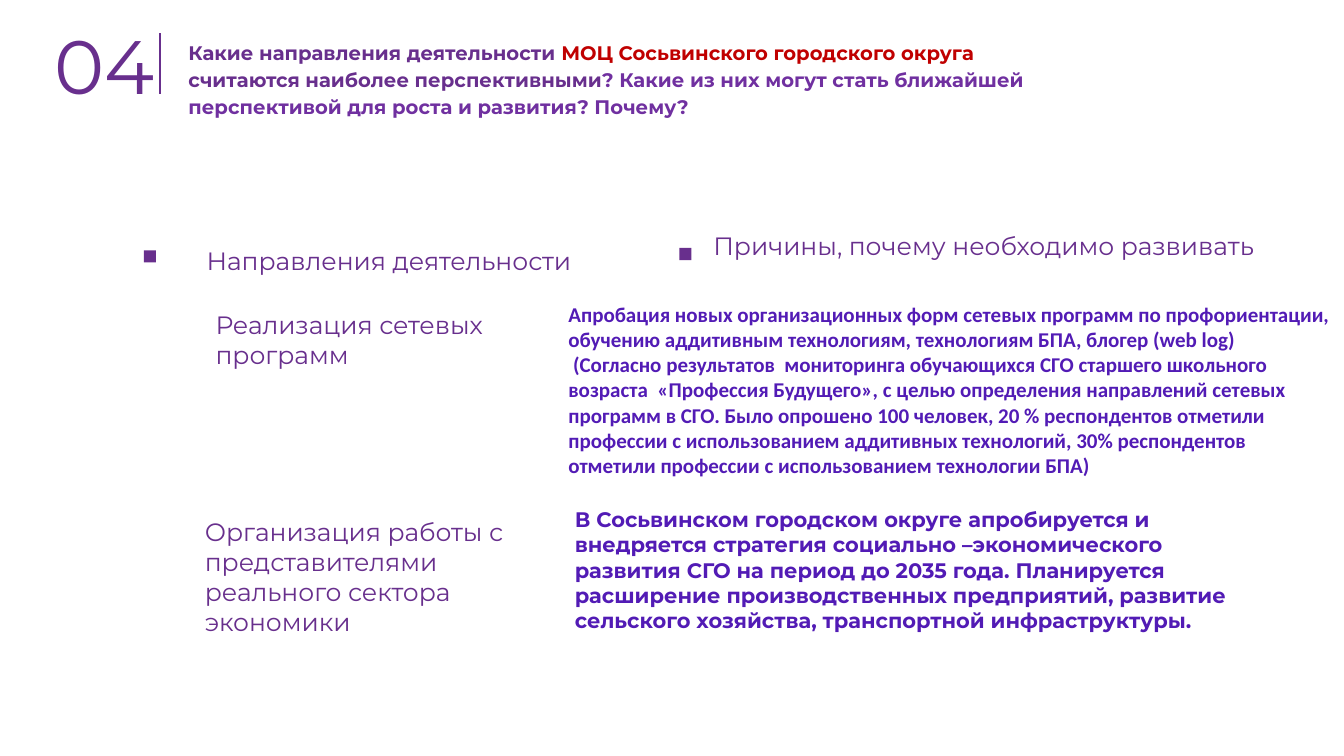
from dataclasses import dataclass

from pptx import Presentation
from pptx.dml.color import RGBColor
from pptx.enum.shapes import MSO_CONNECTOR, MSO_SHAPE
from pptx.enum.text import MSO_AUTO_SIZE
from pptx.oxml.ns import qn
from pptx.util import Inches, Pt

RECT = MSO_SHAPE.RECTANGLE
LINE = MSO_CONNECTOR.STRAIGHT
GROW = MSO_AUTO_SIZE.SHAPE_TO_FIT_TEXT


@dataclass(frozen=True)
class Theme:
    plum: RGBColor = RGBColor(0x68, 0x2F, 0x8D)
    violet: RGBColor = RGBColor(0x70, 0x30, 0xA0)
    red: RGBColor = RGBColor(0xC0, 0x00, 0x00)
    indigo: RGBColor = RGBColor(0x52, 0x1B, 0xB5)
    face: str = "Montserrat"
    plain: str = "Calibri"
    number: float = 54
    title: float = 14
    head: float = 17.9
    body: float = 15
    rule: float = 1.42


class Page:
    """Draws on one slide; all places are percent of its width and height."""

    def __init__(self, deck, theme):
        self.deck = deck
        self.theme = theme
        self.slide = deck.slides.add_slide(deck.slide_layouts[6])
        self.shapes = self.slide.shapes

    def place(self, *box):
        sides = (self.deck.slide_width, self.deck.slide_height)
        return [int(sides[i % 2] * share / 100) for i, share in enumerate(box)]

    def mark(self, left, top):
        square = self.shapes.add_shape(RECT, *self.place(left, top, 0.9, 1.6))
        square.shadow.inherit = False
        square.fill.solid()
        square.fill.fore_color.rgb = self.theme.plum
        square.line.fill.background()

    def rule(self, *ends):
        line = self.shapes.add_connector(LINE, *self.place(*ends))
        line.line.color.rgb = self.theme.plum
        line.line.width = Pt(self.theme.rule)
        props = line._element.spPr
        props.append(props.makeelement(qn("a:effectLst"), {}))

    def text(self, box, paras, size, color=None, bold=False, face=None,
             inset=True, space=None):
        """Each paragraph is a string or a list of (string, colour) runs."""
        frame = self.shapes.add_textbox(*self.place(*box)).text_frame
        frame.word_wrap = True
        frame.auto_size = GROW
        if not inset:
            frame.margin_left = frame.margin_top = Inches(0.01)
            frame.margin_right = frame.margin_bottom = 0
        for i, para in enumerate(paras):
            item = frame.add_paragraph() if i else frame.paragraphs[0]
            if space:
                item.line_spacing = space
            font = item.font
            font.name = face or self.theme.face
            font.size = Pt(size)
            font.bold = bold
            if isinstance(para, str):
                font.color.rgb = color or self.theme.plum
                item.add_run().text = para
                continue
            for words, tint in para:
                run = item.add_run()
                run.text = words
                run.font.color.rgb = tint


def main():
    deck = Presentation()
    deck.slide_width, deck.slide_height = Inches(13.33), Inches(7.5)
    theme = Theme()
    page = Page(deck, theme)

    # Slide number and title
    page.rule(11.93, 4.4, 11.93, 12.5)
    page.text((4, 2.4, 7.7, 12.3), ["04"], theme.number, inset=False)
    title = [
        ("Какие направления деятельности ", theme.plum),
        ("МОЦ Сосьвинского городского округа ", theme.red),
        ("считаются наиболее перспективными", theme.plum),
        ("? Какие из них могут стать ближайшей перспективой "
         "для роста и развития? Почему?", theme.violet),
    ]
    page.text((13.95, 4.8, 65, 7.3), [title], theme.title, bold=True,
              inset=False, space=1.15)

    # Column heads
    page.mark(10.7, 33.1)
    page.text((15.3, 32.3, 28.6, 4.1), ["Направления деятельности"],
              theme.head, inset=False)
    page.mark(50.55, 32.8)
    page.text((53, 30.3, 44.7, 4.1), ["Причины, почему необходимо развивать"],
              theme.head, inset=False)

    # Network programmes
    page.text((15.3, 40.3, 24.15, 9.3), ["Реализация сетевых программ"],
              theme.head)
    page.text((41.55, 39.2, 58.5, 24.9), [
        "Апробация новых организационных форм сетевых программ по "
        "профориентации, обучению аддитивным технологиям, технологиям БПА, "
        "блогер (web log)",
        " (Согласно результатов  мониторинга обучающихся СГО старшего "
        "школьного возраста  «Профессия Будущего», с целью определения "
        "направлений сетевых программ в СГО. Было опрошено 100 человек, "
        "20 % респондентов отметили профессии с использованием аддитивных "
        "технологий, 30% респондентов отметили профессии с использованием "
        "технологии БПА)",
    ], theme.body, theme.indigo, bold=True, face=theme.plain)

    # Work with the economy
    page.text((14.5, 67.6, 24.15, 17.5), [
        "Организация работы с представителями реального сектора экономики",
    ], theme.head)
    page.text((42.7, 66.9, 49.1, 13.6), [
        "В Сосьвинском городском округе апробируется и внедряется стратегия "
        "социально –экономического развития СГО на период до 2035 года. "
        "Планируется расширение производственных предприятий, развитие "
        "сельского хозяйства, транспортной инфраструктуры.",
    ], theme.body, theme.indigo, bold=True, inset=False)

    deck.save("out.pptx")


if __name__ == "__main__":
    main()
